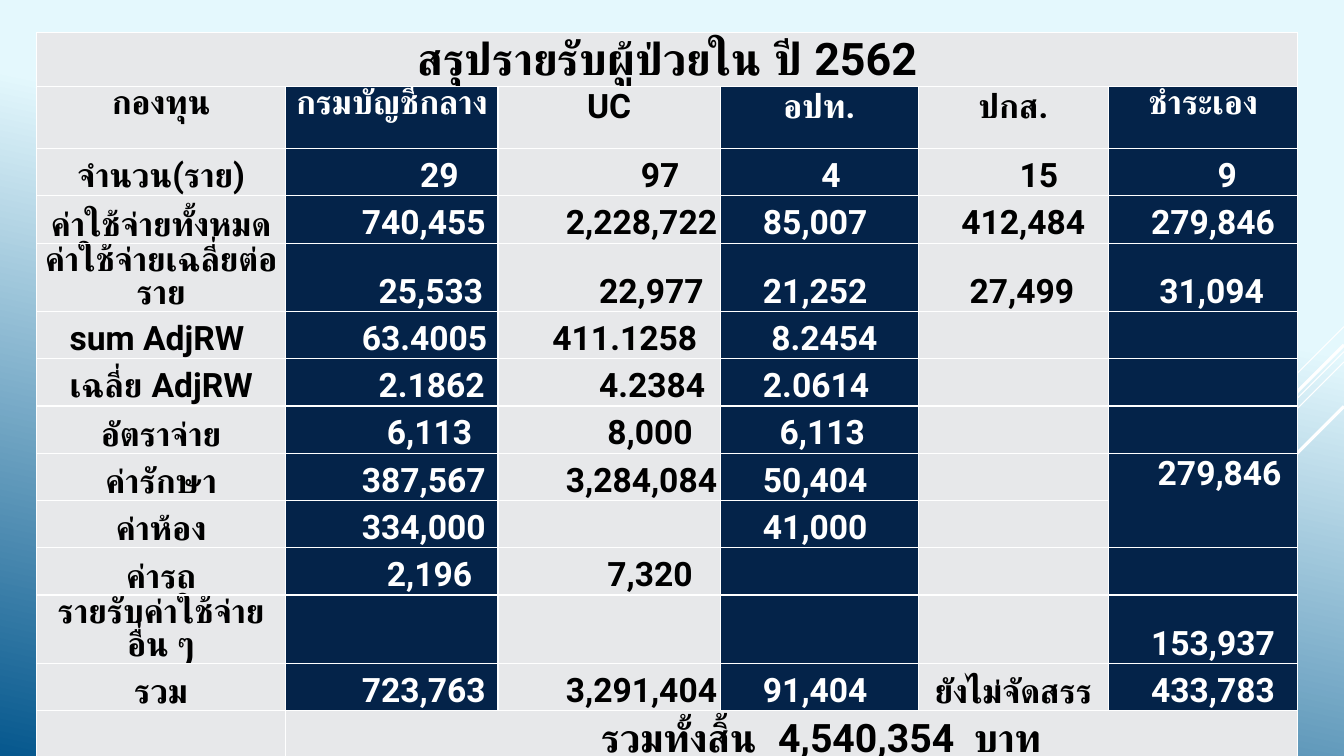
"""Build the 2562 inpatient income summary slide."""
from lxml import etree
from pptx import Presentation
from pptx.dml.color import RGBColor
from pptx.enum.shapes import MSO_CONNECTOR
from pptx.enum.text import MSO_ANCHOR, PP_ALIGN
from pptx.oxml import parse_xml
from pptx.oxml.ns import qn
from pptx.util import Cm, Pt

COLORS = {"navy": "042349", "grey": "E7E8EA", "white": "FFFFFF",
          "black": "000000", "sky": "E4F8FD", "blue": "06588E"}
NS = "http://schemas.openxmlformats.org/drawingml/2006/main"
SPACE = 0.21


def rgb(name):
    return RGBColor.from_string(COLORS[name])


def add_borders(cell):
    tc_pr = cell._tc.get_or_add_tcPr()
    for i, side in enumerate(("lnL", "lnR", "lnT", "lnB")):
        tc_pr.insert(i, parse_xml(
            f'<a:{side} xmlns:a="{NS}" w="12700"><a:solidFill>'
            f'<a:srgbClr val="{COLORS["white"]}"/></a:solidFill></a:{side}>'))


prs = Presentation()
prs.slide_width, prs.slide_height = Cm(33.87), Cm(19.05)
s = prs.slides.add_slide(prs.slide_layouts[6])

fill = s.background.fill
fill.gradient()
fill.gradient_angle = 258
for stop, position, name in zip(fill.gradient_stops, (0.34, 1), ("sky", "blue")):
    stop.position = position
    stop.color.rgb = rgb(name)

RAYS = [(8.23, 2.54, 0.75), (8.86, 8.28, 0.75), (9.12, 5.26, 0.75),
        (8.69, 4.85, 2.25), (10.24, 3.53, 2.25)]
for top, run, width in RAYS:
    ray = s.shapes.add_connector(MSO_CONNECTOR.STRAIGHT, Cm(33.87), Cm(top),
                                 Cm(33.87 - run), Cm(top + run))
    ray.line.color.rgb = rgb("white")
    ray.line.width = Pt(width)
    etree.SubElement(ray._element.spPr, qn("a:effectLst"))

# A plain string is centred; a pair is (indent in spaces, text).
ROWS = [
    ["สรุปรายรับผู้ป่วยใน ปี 2562"] + [None] * 5,
    ["กองทุน", "กรมบัญชีกลาง", "UC", "อปท.", "ปกส.", "ชำระเอง"],
    ["จำนวน(ราย)", (16, "29"), (17, "97"), (12, "4"), (12, "15"), (13, "9")],
    ["ค่าใช้จ่ายทั้งหมด", (9, "740,455"), (8, "2,228,722"), (5, "85,007"),
     (5, "412,484"), (5, "279,846")],
    ["ค่าใช้จ่ายเฉลี่ยต่อราย", (11, "25,533"), (12, "22,977"), (5, "21,252"),
     (6, "27,499"), (6, "31,094")],
    ["sum AdjRW ", (9, "63.4005"), (6.4, "411.1258"), (6, "8.2454"), None, None],
    ["เฉลี่ย AdjRW", (11, "2.1862"), (12, "4.2384"), (5, "2.0614"), None, None],
    ["อัตราจ่าย", (12, "6,113"), (13, "8,000"), (7, "6,113"), None, None],
    ["ค่ารักษา", (9, "387,567"), (8, "3,284,084"), (5, "50,404"), None,
     (5.8, "279,846")],
    ["ค่าห้อง", (9, "334,000"), None, (5, "41,000"), None, None],
    ["ค่ารถ", (12, "2,196"), (13, "7,320"), None, None, None],
    ["รายรับค่าใช้จ่ายอื่น ๆ", None, None, None, None, (5, "153,937")],
    ["รวม", (9, "723,763"), (8, "3,291,404"), (5, "91,404"), "ยังไม่จัดสรร",
     (5, "433,783")],
    [None, (37.7, "รวมทั้งสิ้น  4,540,354  บาท")] + [None] * 4,
]
WIDTHS = [6.28, 5.35, 5.6, 5, 4.78, 4.78]
HEIGHTS = [1.32, 1.57] + [1.19] * 11 + [1.42]
SIZES = {0: 32, 13: 28}
ANCHORS = {(1, c): MSO_ANCHOR.TOP for c in range(6)}
ANCHORS |= {(8, 5): MSO_ANCHOR.TOP, (13, 1): MSO_ANCHOR.MIDDLE}

table = s.shapes.add_table(len(ROWS), len(WIDTHS), Cm(0.92), Cm(0.82),
                           Cm(sum(WIDTHS)), Cm(sum(HEIGHTS))).table
table.first_row = table.horz_banding = False
for column, width in zip(table.columns, WIDTHS):
    column.width = Cm(width)
for row, height in zip(table.rows, HEIGHTS):
    row.height = Cm(height)
for first, last in (((0, 0), (0, 5)), ((8, 5), (9, 5)), ((13, 1), (13, 5))):
    table.cell(*first).merge(table.cell(*last))

for i, entries in enumerate(ROWS):
    for j, entry in enumerate(entries):
        cell = table.cell(i, j)
        navy = j % 2 == 1 and i not in SIZES
        indent, text = entry if isinstance(entry, tuple) else (0, entry)
        cell_format = {"margin_left": Cm(0.03 + SPACE * indent),
                       "margin_right": Cm(0.03), "margin_top": Cm(0.03),
                       "margin_bottom": 0,
                       "vertical_anchor": ANCHORS.get((i, j), MSO_ANCHOR.BOTTOM)}
        for key, value in cell_format.items():
            setattr(cell, key, value)
        cell.fill.solid()
        cell.fill.fore_color.rgb = rgb("navy" if navy else "grey")
        add_borders(cell)
        if text is None:
            continue
        p = cell.text_frame.paragraphs[0]
        p.alignment = PP_ALIGN.LEFT if indent else PP_ALIGN.CENTER
        r = p.add_run()
        r.text = text
        font_format = {"name": "Roboto", "size": Pt(SIZES.get(i, 24)), "bold": True}
        for key, value in font_format.items():
            setattr(r.font, key, value)
        r.font.color.rgb = rgb("white" if navy else "black")

prs.save("out.pptx")
